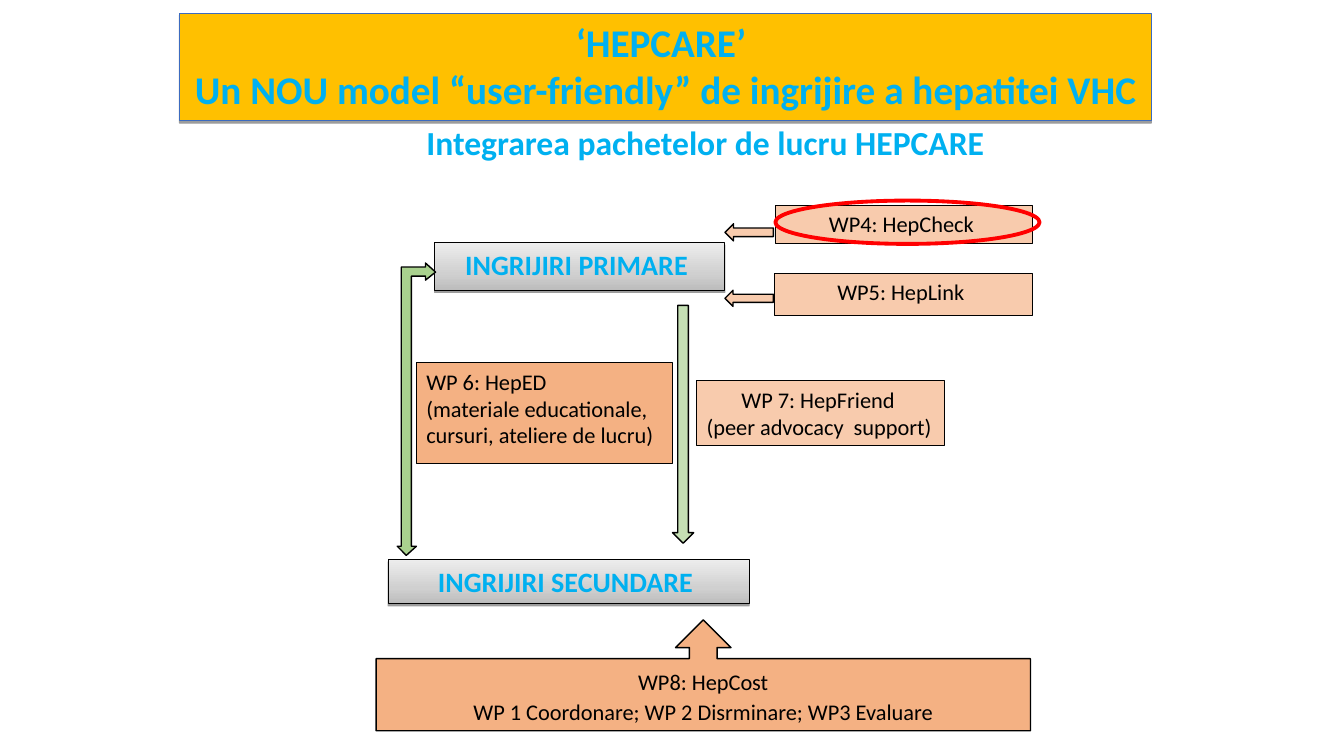
import copy
import dataclasses

import pptx
import pptx.dml.color
import pptx.enum.shapes
import pptx.enum.text
import pptx.oxml.ns
import pptx.util
from lxml import etree

Inches = pptx.util.Inches
SHAPE = pptx.enum.shapes.MSO_SHAPE
ALIGN = pptx.enum.text.PP_ALIGN
CENTER, LEFT = ALIGN.CENTER, ALIGN.LEFT
qn = pptx.oxml.ns.qn


@dataclasses.dataclass(frozen=True)
class Theme:
    font: str = "Calibri"
    title: int = 28
    subtitle: int = 24
    level: int = 20
    body: int = 16
    accent: str = "00B0F0"
    ink: str = "000000"
    banner: str = "FFC000"
    banner_line: str = "3C6BBF"
    peach: str = "F8CBAD"
    orange: str = "F4B183"
    pale_green: str = "C5E0B4"
    green: str = "A9D18E"
    highlight: str = "FF0000"
    metal: tuple = ((0, "BCBCBC"), (0.35, "D0D0D0"), (1, "EDEDED"))
    thin: float = 0.75
    outline: float = 1
    ring: float = 2.75


THEME = Theme()


@dataclasses.dataclass(frozen=True)
class Box:
    left: float
    top: float
    width: float
    height: float

    def inside(self, left, top, width, height):
        return Box(self.left + left, self.top + top, width, height)

    def lengths(self):
        return [Inches(value) for value in dataclasses.astuple(self)]


def rgb(color):
    return pptx.dml.color.RGBColor.from_string(color)


def paint(shape, fill, line=THEME.ink, weight=THEME.thin):
    """Fill with a colour, a tuple of gradient stops, or nothing."""
    shape.shadow.inherit = False
    if fill is None:
        shape.fill.background()
    elif isinstance(fill, tuple):
        shape.fill.gradient()
        stop_list = next(shape._element.spPr.iter(qn("a:gsLst")))
        stop_list.append(copy.deepcopy(stop_list[0]))
        for stop, (position, color) in zip(shape.fill.gradient_stops, fill):
            stop.position = position
            stop.color.rgb = rgb(color)
        shape.fill.gradient_angle = 90
    else:
        shape.fill.solid()
        shape.fill.fore_color.rgb = rgb(fill)
    shape.line.color.rgb = rgb(line)
    shape.line.width = pptx.util.Pt(weight)


def add_shadow(shape):
    effects = shape._element.spPr.find(qn("a:effectLst"))
    shadow = etree.SubElement(effects, qn("a:outerShdw"), blurRad="0", dist="20000",
                              dir="5400000", rotWithShape="0")
    color = etree.SubElement(shadow, qn("a:srgbClr"), val=THEME.ink)
    etree.SubElement(color, qn("a:alpha"), val="38000")


def write(shape, lines, size=THEME.body, color=THEME.ink, bold=False, spacing=1.0):
    """Write (text, alignment) lines, one paragraph each."""
    frame = shape.text_frame
    frame.word_wrap = True
    frame.vertical_anchor = pptx.enum.text.MSO_ANCHOR.TOP
    style = {"name": THEME.font, "size": pptx.util.Pt(size), "bold": bold}
    for index, (text, alignment) in enumerate(lines):
        paragraph = frame.add_paragraph() if index else frame.paragraphs[0]
        paragraph.alignment = alignment
        paragraph.line_spacing = spacing
        run = paragraph.add_run()
        run.text = text
        for name, value in style.items():
            setattr(run.font, name, value)
        run.font.color.rgb = rgb(color)


def add_preset(slide, preset, box, fill, **line):
    shape = slide.shapes.add_shape(preset, *box.lengths())
    paint(shape, fill, **line)
    return shape


def add_header(slide, box):
    # Banner
    banner = add_preset(slide, SHAPE.RECTANGLE, box.inside(0, 0, box.width, 1.07),
                        THEME.banner, line=THEME.banner_line)
    add_shadow(banner)
    write(banner, [("‘HEPCARE’ ", CENTER),
                   ("Un NOU model “user-friendly” de ingrijire a hepatitei VHC", CENTER)],
          THEME.title, THEME.accent, True)
    # Subtitle
    subtitle = slide.shapes.add_textbox(*box.inside(2.35, 1.03, 6.28, 0.5).lengths())
    write(subtitle, [("Integrarea pachetelor de lucru HEPCARE", LEFT)],
          THEME.subtitle, THEME.accent, True)


def add_care_levels(slide, box):
    levels = [("INGRIJIRI PRIMARE ", (0.58, 0.42, 2.88, 0.47)),
              ("INGRIJIRI SECUNDARE ", (0.12, 3.56, 3.58, 0.44))]
    for text, place in levels:
        level = add_preset(slide, SHAPE.RECTANGLE, box.inside(*place), THEME.metal)
        add_shadow(level)
        write(level, [(text, CENTER)], THEME.level, THEME.accent, True)


def add_work_packages(slide, box):
    packages = [
        ((3.96, 0.05, 2.55, 0.38), THEME.peach, [("WP4: HepCheck ", CENTER)]),
        ((3.95, 0.72, 2.56, 0.42), THEME.peach, [("WP5: HepLink ", CENTER)]),
        ((3.18, 1.79, 2.46, 0.64), THEME.peach,
         [("WP 7: HepFriend ", CENTER), ("(peer advocacy  support)", LEFT)]),
        ((0.4, 1.61, 2.54, 1), THEME.orange,
         [("WP 6: HepED", LEFT),
          ("(materiale educationale, cursuri, ateliere de lucru)", LEFT)]),
    ]
    for place, fill, lines in packages:
        write(add_preset(slide, SHAPE.RECTANGLE, box.inside(*place), fill), lines)


def add_arrows(slide, box):
    arrows = [(SHAPE.LEFT_ARROW, (3.46, 0.23, 0.48, 0.17), THEME.peach),
              (SHAPE.LEFT_ARROW, (3.46, 0.89, 0.48, 0.16), THEME.peach),
              (SHAPE.DOWN_ARROW, (2.94, 1.04, 0.21, 2.36), THEME.pale_green)]
    for preset, place, fill in arrows:
        add_preset(slide, preset, box.inside(*place), fill, weight=THEME.outline)
    # Bent double arrow between the two care levels
    bend = box.inside(0.21, 0.62, 0.38, 2.9)
    points = [(0.38, 0.09), (0.28, 0.17), (0.28, 0.13), (0.14, 0.13), (0.14, 2.81),
              (0.19, 2.81), (0.09, 2.9), (0, 2.81), (0.04, 2.81), (0.04, 0.04),
              (0.28, 0.04), (0.28, 0)]
    corners = [(Inches(bend.left + x), Inches(bend.top + y)) for x, y in points]
    builder = slide.shapes.build_freeform(*corners[0])
    builder.add_line_segments(corners[1:], close=True)
    paint(builder.convert_to_shape(), THEME.green, weight=THEME.outline)


def add_foundation(slide, box):
    callout = add_preset(slide, SHAPE.UP_ARROW_CALLOUT, box, THEME.orange,
                         weight=THEME.outline)
    for index, value in enumerate((0.25, 0.25, 0.25, 0.65)):
        callout.adjustments[index] = value
    write(callout, [("WP8: HepCost", CENTER),
                    ("WP 1 Coordonare; WP 2 Disrminare; WP3 Evaluare", CENTER)],
          spacing=1.15)


def main():
    presentation = pptx.Presentation()
    presentation.slide_width = Inches(13.33)
    presentation.slide_height = Inches(7.5)
    slide = presentation.slides.add_slide(presentation.slide_layouts[6])
    diagram = Box(3.73, 1.99, 6.58, 5.26)

    add_header(slide, Box(1.78, 0.13, 9.64, 1.53))
    add_care_levels(slide, diagram)
    add_work_packages(slide, diagram)
    add_arrows(slide, diagram)
    add_foundation(slide, diagram.inside(0, 4.16, 6.49, 1.1))
    # Ring around the highlighted package
    add_preset(slide, SHAPE.OVAL, diagram.inside(3.96, 0, 2.62, 0.43), None,
               line=THEME.highlight, weight=THEME.ring)
    presentation.save("out.pptx")


if __name__ == "__main__":
    main()
